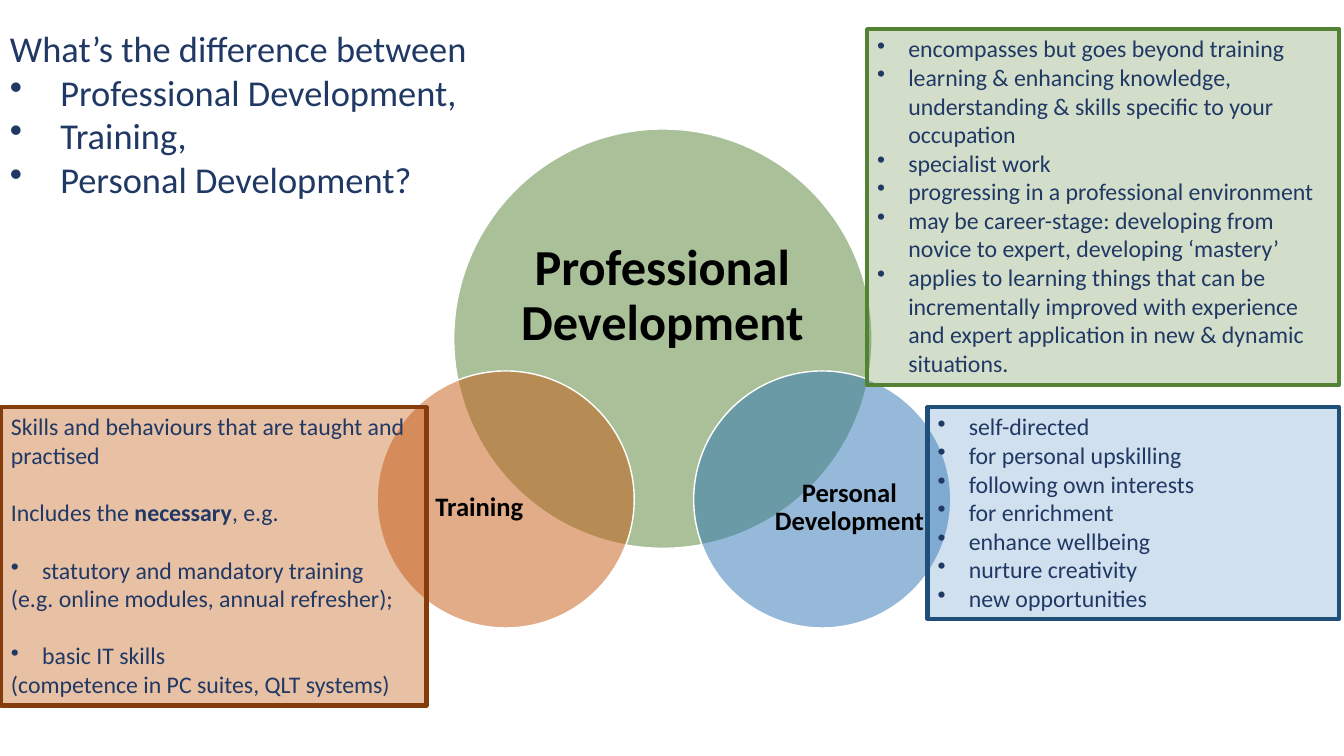
from dataclasses import dataclass

import pptx
import pptx.dml.color
import pptx.enum.shapes
import pptx.enum.text
import pptx.oxml.ns
import pptx.presentation
import pptx.shapes.autoshape
import pptx.slide
import pptx.text.text
import pptx.util
from lxml import etree

Inches = pptx.util.Inches
Pt = pptx.util.Pt
RGB = pptx.dml.color.RGBColor
Shape = pptx.enum.shapes.MSO_SHAPE
Fit = pptx.enum.text.MSO_AUTO_SIZE
Anchor = pptx.enum.text.MSO_ANCHOR
Align = pptx.enum.text.PP_ALIGN
qn = pptx.oxml.ns.qn

FONT = "Calibri"
NAVY = RGB(0x20, 0x38, 0x64)
BLACK = RGB(0, 0, 0)
WHITE = RGB(255, 255, 255)
GREEN = RGB(0x54, 0x82, 0x35)
BLUE = RGB(0x2E, 0x75, 0xB6)
DEEP = RGB(0x1F, 0x4E, 0x79)
RUST = RGB(0xC5, 0x5A, 0x11)
BROWN = RGB(0x84, 0x3C, 0x0B)

Box = tuple[float, float, float, float]


@dataclass
class Item:
    text: str  # stars enclose bold words
    dot: bool = True
    gap: float = 0


@dataclass
class Circle:
    box: Box
    fill: RGB
    label: str
    area: Box
    size: int


@dataclass
class Panel:
    box: Box
    fill: RGB
    alpha: int
    edge: RGB
    items: list[Item]


LINE = 20.5  # height of one line of panel text, in points

TITLE = [
    Item("What’s the difference between", False),
    Item("Professional Development,"),
    Item("Training,"),
    Item("Personal Development?"),
]

CIRCLES = [
    Circle((4.5, 1.28, 4.15, 4.16), GREEN, "Professional Development",
           (5.05, 2.01, 3.04, 1.87), 36),
    Circle((6.88, 3.68, 2.55, 2.55), BLUE, "Personal Development",
           (7.66, 4.34, 1.53, 1.4), 19),
    Circle((3.74, 3.68, 2.55, 2.55), RUST, "Training",
           (3.99, 4.34, 1.53, 1.4), 19),
]

PANELS = [
    Panel((0.01, 4.04, 4.22, 2.96), RUST, 38, BROWN, [
        Item("Skills and behaviours that are taught and practised", False),
        Item("Includes the *necessary*, e.g.", False, LINE),
        Item("statutory and mandatory training", True, LINE),
        Item("(e.g. online modules, annual refresher);", False),
        Item("basic IT skills", True, LINE),
        Item("(competence in PC suites, QLT systems)", False),
    ]),
    Panel((9.2, 4.04, 4.08, 2.1), BLUE, 22, DEEP, [
        Item("self-directed"),
        Item("for personal upskilling"),
        Item("following own interests"),
        Item("for enrichment"),
        Item("enhance wellbeing"),
        Item("nurture creativity"),
        Item("new opportunities"),
    ]),
    Panel((8.6, 0.29, 4.68, 3.53), GREEN, 26, GREEN, [
        Item("encompasses but goes beyond training"),
        Item("learning & enhancing knowledge, understanding & skills "
             "specific to your occupation"),
        Item("specialist work"),
        Item("progressing in a professional environment"),
        Item("may be career-stage: developing from novice to expert, "
             "developing ‘mastery’"),
        Item("applies to learning things that can be incrementally improved "
             "with experience and expert application in new & dynamic "
             "situations."),
    ]),
]


def style(run, size: int, color: RGB, bold: bool) -> None:
    run.font.name = FONT
    run.font.size = Pt(size)
    run.font.color.rgb = color
    run.font.bold = bold


def write(frame: pptx.text.text.TextFrame, items: list[Item], size: int,
          indent: float) -> None:
    """Fill a frame with left-aligned lines, some of them bulleted."""
    frame.word_wrap = True
    frame.auto_size = Fit.SHAPE_TO_FIT_TEXT
    frame.vertical_anchor = Anchor.TOP
    for n, item in enumerate(items):
        para = frame.add_paragraph() if n else frame.paragraphs[0]
        if item.dot:
            props = para._p.get_or_add_pPr()
            props.set("marL", str(Inches(indent)))
            props.set("indent", str(-Inches(indent)))
            etree.SubElement(props, qn("a:buChar")).set("char", "•")
        para.alignment = Align.LEFT
        if item.gap:
            para.space_before = Pt(item.gap)
        for k, part in enumerate(item.text.split("*")):
            run = para.add_run()
            run.text = part
            style(run, size, NAVY, k % 2 == 1)


def draw(slide: pptx.slide.Slide, kind: Shape, box: Box, fill: RGB,
         alpha: int, edge: RGB, width: float) -> pptx.shapes.autoshape.Shape:
    """Add an outlined shape with a see-through fill."""
    shape = slide.shapes.add_shape(kind, *map(Inches, box))
    shape.shadow.inherit = False
    shape.fill.solid()
    shape.fill.fore_color.rgb = fill
    tint = shape._element.spPr.find(qn("a:solidFill")).find(qn("a:srgbClr"))
    etree.SubElement(tint, qn("a:alpha")).set("val", str(alpha * 1000))
    shape.line.color.rgb = edge
    shape.line.width = Pt(width)
    return shape


def label(slide: pptx.slide.Slide, circle: Circle) -> None:
    """Add the centred name of a circle."""
    frame = slide.shapes.add_textbox(*map(Inches, circle.area)).text_frame
    frame.word_wrap = True
    frame.vertical_anchor = Anchor.MIDDLE
    frame.margin_left = frame.margin_right = 0
    frame.margin_top = frame.margin_bottom = 0
    frame.text = circle.label
    para = frame.paragraphs[0]
    para.alignment = Align.CENTER
    para.line_spacing = 0.9
    style(para.runs[0], circle.size, BLACK, True)


def main() -> None:
    deck = pptx.Presentation()
    deck.slide_width = Inches(13.33)
    deck.slide_height = Inches(7.5)
    slide = deck.slides.add_slide(deck.slide_layouts[6])

    # Question
    head = slide.shapes.add_textbox(*map(Inches, (0, 0.21, 4.83, 1.85)))
    write(head.text_frame, TITLE, 26, 0.5)

    # Overlapping circles
    for circle in CIRCLES:
        draw(slide, Shape.OVAL, circle.box, circle.fill, 50, WHITE, 1)
        label(slide, circle)

    # Explanations
    for panel in PANELS:
        shape = draw(slide, Shape.RECTANGLE, panel.box, panel.fill,
                     panel.alpha, panel.edge, 3)
        write(shape.text_frame, panel.items, 17, 0.31)

    deck.save("out.pptx")


if __name__ == "__main__":
    main()
